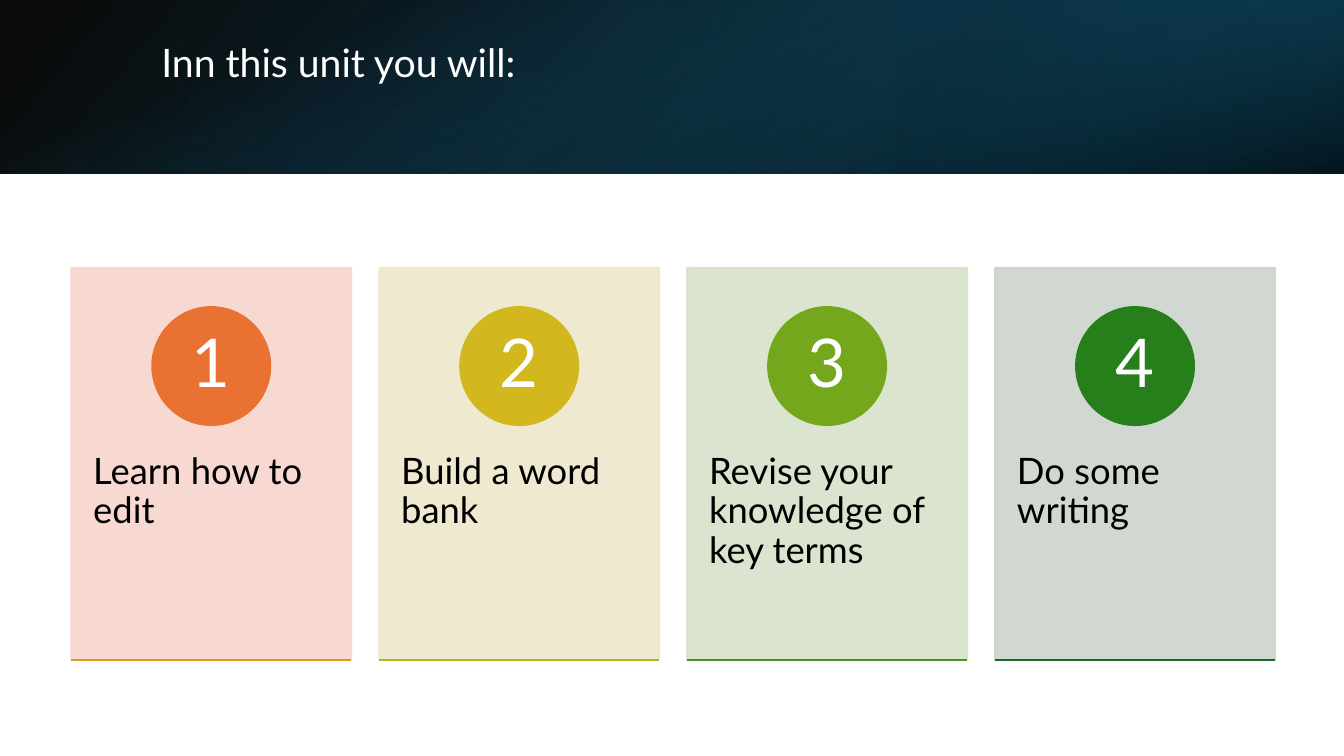
from lxml.etree import SubElement
from pptx import Presentation
from pptx.dml.color import RGBColor
from pptx.enum.shapes import MSO_CONNECTOR, MSO_SHAPE
from pptx.enum.text import MSO_ANCHOR, PP_ALIGN
from pptx.oxml.ns import qn
from pptx.util import Cm, Pt

COLORS = {
    "white": "FFFFFF", "black": "000000", "navy": "104862",
    "deep": "0B3041", "teal": "156082",
}
FONT = "Lato"
SLIDE_WIDTH, SLIDE_HEIGHT = 33.87, 19.05
BAND_HEIGHT = 4.38
CARD_LEFT, CARD_TOP, CARD_STEP = 1.8, 6.75, 7.76
CARD_WIDTH, CARD_HEIGHT = 7.05, 9.88
CIRCLE_SIZE = 2.97
CARDS = [
    ("Learn how to edit", "F7D5CE", "E97132", "E49622"),
    ("Build a word bank", "EEE7CB", "D2B81E", "ABBC1E"),
    ("Revise your knowledge of key terms", "D8E2CA", "75A71D", "49931D"),
    ("Do some writing", "CCD4CD", "277F1B", "196B24"),
]


def add_panel(slide, kind, box, color):
    """Add a shadowless shape filled and outlined in one colour."""
    panel = slide.shapes.add_shape(kind, *[Cm(length) for length in box])
    panel.shadow.inherit = False
    panel.fill.solid()
    panel.fill.fore_color.rgb = RGBColor.from_string(color)
    panel.line.color.rgb = RGBColor.from_string(color)
    panel.line.width = Pt(1.5)
    return panel


def set_opacity(panel, percent):
    """Make the fill and outline of a panel partly transparent."""
    for color in panel._element.spPr.iter(qn("a:srgbClr")):
        SubElement(color, qn("a:alpha"), val=str(percent * 1000))


def set_text(frame, text, size, color, align=PP_ALIGN.LEFT):
    """Write one wrapped paragraph in the slide font."""
    frame.word_wrap = True
    para = frame.paragraphs[0]
    para.text = text
    para.alignment = align
    para.line_spacing = 0.9
    para.font.name = FONT
    para.font.size = Pt(size)
    para.font.color.rgb = RGBColor.from_string(COLORS[color])


def add_gradient(slide, box, stops, angle, rotation=0, flipped=False):
    """Add a borderless rectangle with a linear gradient of translucent stops."""
    layer = add_panel(slide, MSO_SHAPE.RECTANGLE, box, COLORS["navy"])
    layer.line.fill.background()
    layer.rotation = rotation
    properties = layer._element.spPr
    if flipped:
        properties.find(qn("a:xfrm")).set("flipH", "1")
    solid = properties.find(qn("a:solidFill"))
    gradient = properties.makeelement(qn("a:gradFill"), {"rotWithShape": "1"})
    properties.replace(solid, gradient)
    stop_list = SubElement(gradient, qn("a:gsLst"))
    for position, color, opacity in stops:
        stop = SubElement(stop_list, qn("a:gs"), pos=str(position * 1000))
        tint = SubElement(stop, qn("a:srgbClr"), val=COLORS[color])
        SubElement(tint, qn("a:alpha"), val=str(opacity * 1000))
    SubElement(gradient, qn("a:lin"), ang=str(angle * 60000), scaled="0")


def add_header(slide, left, top, width, height):
    """Layer the gradients of the header band and place the title on it."""
    add_gradient(slide, (left, top, width, height),
                 [(0, "black", 96), (100, "navy", 100)], 140, flipped=True)
    add_gradient(slide, (left + width * 2 / 3, top, width / 3, height),
                 [(19, "deep", 68), (100, "teal", 79)], 320, 180, True)
    offset = (width - height) / 2
    add_gradient(slide, (left + offset, top - offset, height, width),
                 [(23, "teal", 0), (99, "black", 74)], 340, 90)
    title = slide.shapes.title
    title.left, title.top = Cm(left + 3.81), Cm(top + 0.97)
    title.width, title.height = Cm(27.89), Cm(2.44)
    title.text_frame.vertical_anchor = MSO_ANCHOR.TOP
    set_text(title.text_frame, "Inn this unit you will:", 28, "white")
    slide.shapes._spTree.append(title._element)


def add_card(slide, box, number, card):
    """Add a tinted card with a numbered circle, a text and a base line."""
    left, top, width, height = box
    text, tint, circle_color, line_color = card
    set_opacity(add_panel(slide, MSO_SHAPE.RECTANGLE, box, tint), 90)

    label = slide.shapes.add_textbox(Cm(left), Cm(top + 3.76), Cm(width), Cm(5.92))
    frame = label.text_frame
    frame.margin_left = frame.margin_right = Cm(0.55)
    frame.margin_top = frame.margin_bottom = Cm(0.91)
    set_text(frame, text, 26, "black")

    circle_box = (left + (width - CIRCLE_SIZE) / 2, top + 0.99, CIRCLE_SIZE, CIRCLE_SIZE)
    circle = add_panel(slide, MSO_SHAPE.OVAL, circle_box, circle_color)
    frame = circle.text_frame
    frame.margin_left = frame.margin_right = frame.margin_top = frame.margin_bottom = 0
    frame.vertical_anchor = MSO_ANCHOR.MIDDLE
    set_text(frame, str(number), 48, "white", PP_ALIGN.CENTER)

    base = Cm(top + height)
    line = slide.shapes.add_connector(
        MSO_CONNECTOR.STRAIGHT, Cm(left), base, Cm(left + width), base)
    line.line.color.rgb = RGBColor.from_string(line_color)
    line.line.width = Pt(1.5)
    SubElement(line._element.spPr, qn("a:effectLst"))


def main():
    """Build the unit overview slide and save it."""
    deck = Presentation()
    deck.slide_width, deck.slide_height = Cm(SLIDE_WIDTH), Cm(SLIDE_HEIGHT)
    slide = deck.slides.add_slide(deck.slide_layouts[5])
    slide.background.fill.solid()
    slide.background.fill.fore_color.rgb = RGBColor.from_string(COLORS["white"])
    add_header(slide, 0, 0, SLIDE_WIDTH, BAND_HEIGHT)
    for index, card in enumerate(CARDS):
        box = (CARD_LEFT + index * CARD_STEP, CARD_TOP, CARD_WIDTH, CARD_HEIGHT)
        add_card(slide, box, index + 1, card)
    deck.save("out.pptx")


if __name__ == "__main__":
    main()
